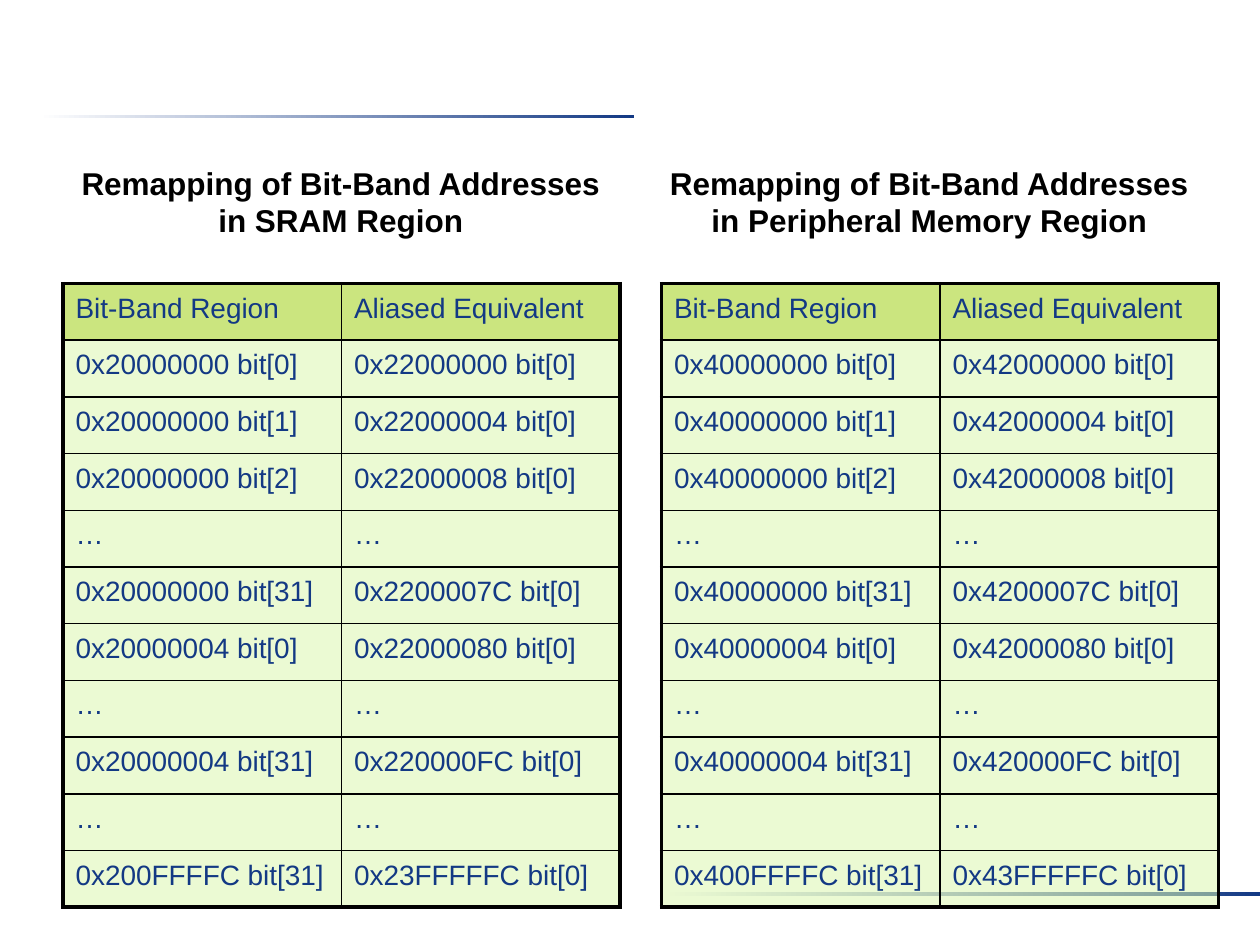
from pptx import Presentation
from pptx.dml.color import RGBColor
from pptx.enum.shapes import MSO_SHAPE
from pptx.enum.text import MSO_AUTO_SIZE, PP_ALIGN
from pptx.util import Inches, Pt
from lxml.etree import SubElement
from pptx.oxml.ns import qn

HUES = {"ink": "133984", "black": "000000", "white": "FFFFFF",
        "head": "99CC00", "body": "D8F6A8"}
COL, ROW = Inches(2.21), Inches(0.45)
TOP = ROW * 5
LEFTS = [Inches(0.5), Inches(5.25)]

ROWS = [
    ("0000000 bit[0]", "2000000 bit[0]"),
    ("0000000 bit[1]", "2000004 bit[0]"),
    ("0000000 bit[2]", "2000008 bit[0]"),
    None,
    ("0000000 bit[31]", "200007C bit[0]"),
    ("0000004 bit[0]", "2000080 bit[0]"),
    None,
    ("0000004 bit[31]", "20000FC bit[0]"),
    None,
    ("00FFFFC bit[31]", "3FFFFFC bit[0]"),
]
AREAS = [("SRAM", 2, Inches(0.5)), ("Peripheral Memory", 4, Inches(5.17))]


def hue(name):
    return RGBColor.from_string(HUES[name])


def edge(cell, side, width):
    line = SubElement(cell._tc.get_or_add_tcPr(), qn("a:ln" + side), w=str(Pt(width)))
    fill = SubElement(line, qn("a:solidFill"))
    SubElement(fill, qn("a:srgbClr"), val=HUES["black"])


deck = Presentation()
deck.slide_width, deck.slide_height = Inches(10), Inches(7.5)
slide = deck.slides.add_slide(deck.slide_layouts[6])
shapes = slide.shapes

for left, top in [(0.31, 0.91), (5.28, 7.08)]:
    bar = shapes.add_shape(MSO_SHAPE.RECTANGLE, Inches(left), Inches(top),
                           Inches(4.72), Inches(0.03))
    bar.shadow.inherit = False
    bar.line.fill.background()
    bar.fill.gradient()
    bar.fill.gradient_angle = 0
    for stop, name, place in zip(bar.fill.gradient_stops, ["white", "ink"], [0, 1]):
        stop.color.rgb = hue(name)
        stop.position = place

for area, base, left in AREAS:
    box = shapes.add_textbox(left, Inches(1.25), Inches(4.41), Inches(0.7))
    frame = box.text_frame
    frame.word_wrap = True
    frame.auto_size = MSO_AUTO_SIZE.SHAPE_TO_FIT_TEXT
    para = frame.paragraphs[0]
    para.text = f"Remapping of Bit-Band Addresses in {area} Region"
    para.alignment = PP_ALIGN.CENTER
    font = para.font
    font.name, font.size, font.bold = "Arial", Pt(18), True
    font.color.rgb = hue("black")

last = len(ROWS)
for (area, base, spot), left in zip(AREAS, LEFTS):
    grid = shapes.add_table(last + 1, 2, left, TOP, COL * 2, ROW * (last + 1)).table
    grid.first_row = grid.horz_banding = False
    lines = [("Bit-Band Region", "Aliased Equivalent")]
    for pair in ROWS:
        lines.append([f"0x{base}{tail}" for tail in pair] if pair else ("…", "…"))
    for row, line in enumerate(lines):
        grid.rows[row].height = ROW
        for col, text in enumerate(line):
            grid.columns[col].width = COL
            cell = grid.cell(row, col)
            outer = {"L": col == 0, "R": col == 1, "T": row == 0, "B": row == last}
            for side, thick in outer.items():
                edge(cell, side, 2.25 if thick else 1)
            cell.fill.solid()
            cell.fill.fore_color.rgb = hue("body" if row else "head")
            tint = cell._tc.tcPr.find(qn("a:solidFill")).find(qn("a:srgbClr"))
            SubElement(tint, qn("a:alpha"), val="50000")
            para = cell.text_frame.paragraphs[0]
            para.text = text
            para.line_spacing = 1.1
            font = para.font
            font.name, font.size = "Arial", Pt(16)
            font.color.rgb = hue("ink")

deck.save("out.pptx")
